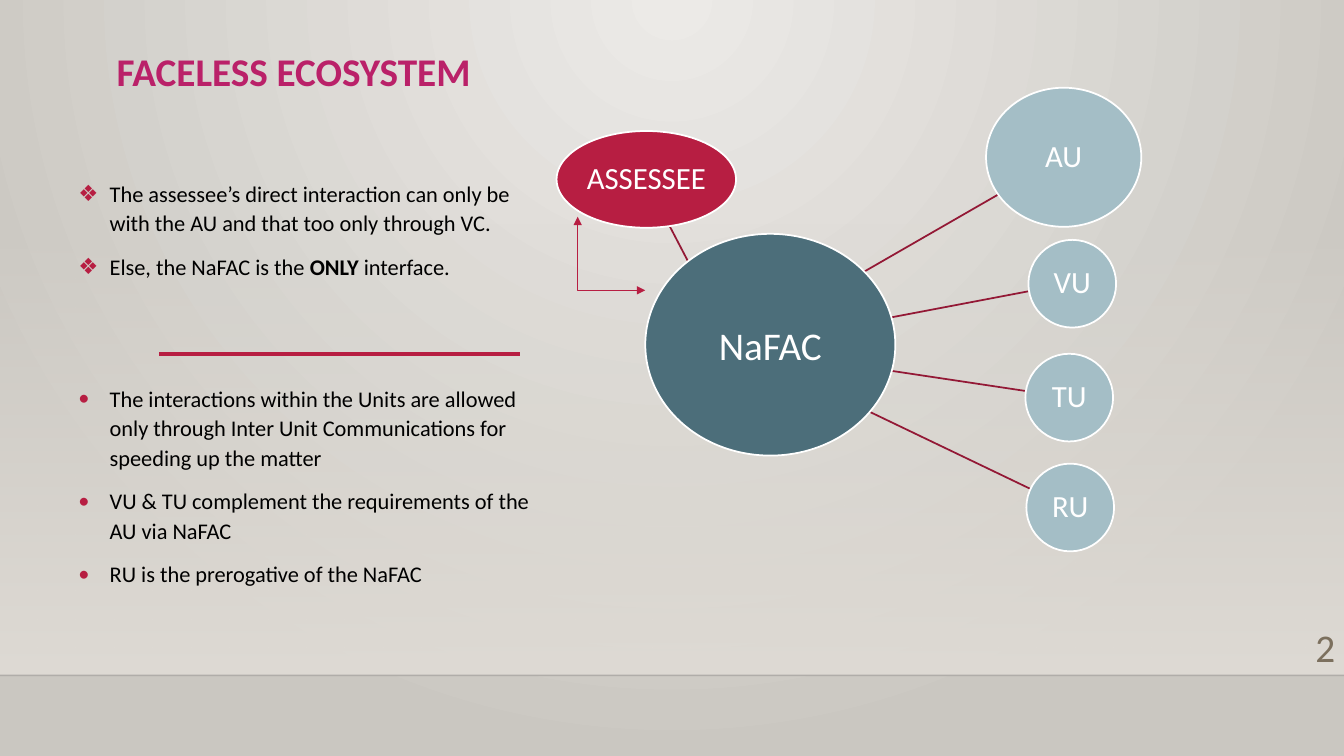
from lxml.etree import SubElement as Sub
from pptx import Presentation
from pptx.dml.color import RGBColor as RGB
from pptx.enum.shapes import MSO_CONNECTOR as LINK, MSO_SHAPE as SHAPE
from pptx.enum.text import MSO_ANCHOR as ANCHOR, PP_ALIGN as ALIGN
from pptx.oxml.ns import qn
from pptx.util import Pt

PX = 9144  # 100 px to the inch
RED, WINE, PINK = RGB(0xB7, 0x1E, 0x42), RGB(0x93, 0x18, 0x35), RGB(0xBA, 0x21, 0x69)
TEAL, MIST = RGB(0x4C, 0x6E, 0x7A), RGB(0xA4, 0xBE, 0xC6)
PALE, STONE, SAND = RGB(0xEC, 0xEA, 0xE7), RGB(0xCA, 0xC7, 0xC1), RGB(0xDF, 0xDB, 0xD5)
WHITE, BLACK, INK, BROWN = RGB(255, 255, 255), RGB(0, 0, 0), RGB(0, 0, 1), RGB(0x7C, 0x70, 0x5E)

deck = Presentation()
deck.slide_width, deck.slide_height = 1333 * PX, 750 * PX
slide = deck.slides.add_slide(deck.slide_layouts[6])
shapes = slide.shapes


def link(ends, color, width, kind=LINK.STRAIGHT):
    line = shapes.add_connector(kind, *[n * PX for n in ends])
    line.line.color.rgb = color
    line.line.width = Pt(width)
    Sub(line.element.spPr, qn("a:effectLst"))
    return line


def write(para, text, size, color, bold=False):
    run = para.add_run()
    run.text = text
    style = {"name": "Calibri", "size": Pt(size), "bold": bold}
    for key, value in style.items():
        setattr(run.font, key, value)
    run.font.color.rgb = color


# Background glow
back = slide.background.fill
back.gradient()
for stop, color in zip(back.gradient_stops, (PALE, STONE)):
    stop.color.rgb = color
grad = slide.element.find(".//" + qn("a:gradFill"))
grad.remove(grad.find(qn("a:lin")))
glow = Sub(grad, qn("a:path"), {"path": "circle"})
Sub(glow, qn("a:fillToRect"), {"l": "43000", "t": "0", "r": "43000", "b": "100000"})

# Wall fading in above the floor edge
wall = shapes.add_shape(SHAPE.RECTANGLE, 0, 221 * PX, 1333 * PX, 449 * PX)
wall.shadow.inherit = False
wall.line.fill.background()
wall.fill.gradient()
wall.fill.gradient_angle = 270
for stop in wall.fill.gradient_stops:
    stop.color.rgb = SAND
edge = link((0, 670, 1333, 670), INK, 1)
for part, alpha in ((wall, "0"), (edge, "20000")):
    tint = part.element.find(".//" + qn("a:srgbClr"))
    Sub(tint, qn("a:alpha"), {"val": alpha})

# Divider and spokes
link((158, 351, 516, 351), RED, 2.5)
for ends in ((778, 368, 1022, 485), (778, 352, 1018, 388), (778, 335, 1020, 289),
             (778, 315, 990, 193), (700, 293, 664, 224)):
    link(ends, WINE, 1.25)

# Hub, assessee and units
for name, x, y, wide, high, color, size, gap in (
        ("NaFAC", 640, 232, 248, 220, TEAL, 28, 1),
        ("ASSESSEE", 552, 130, 178, 96, RED, 22, 0.9),
        ("AU", 978, 87, 154, 138, MIST, 22, 0.9),
        ("VU", 1020, 238, 87, 87, MIST, 22, 0.9),
        ("TU", 1017, 351, 87, 87, MIST, 22, 0.9),
        ("RU", 1018, 460, 87, 87, MIST, 22, 0.9)):
    node = shapes.add_shape(SHAPE.OVAL, x * PX, y * PX, wide * PX, high * PX)
    node.shadow.inherit = False
    node.fill.solid()
    node.fill.fore_color.rgb = color
    node.line.color.rgb = WHITE
    node.line.width = Pt(1.25)
    frame = node.text_frame
    look = {"margin_left": 2 * PX, "margin_right": 2 * PX, "margin_top": 2 * PX,
            "margin_bottom": 2 * PX, "word_wrap": False, "vertical_anchor": ANCHOR.MIDDLE}
    for key, value in look.items():
        setattr(frame, key, value)
    para = frame.paragraphs[0]
    para.alignment = ALIGN.CENTER
    para.line_spacing = gap
    write(para, name, size, WHITE)

# Two-way elbow between assessee and hub
bend = link((643, 218, 570, 285), RED, 0.75, LINK.ELBOW)
form = bend.element.spPr
form.find(qn("a:xfrm")).set("rot", "16200000")
Sub(form.find(qn("a:prstGeom")).find(qn("a:avLst")), qn("a:gd"),
    {"name": "adj1", "fmla": "val 100000"})
for tip in ("a:headEnd", "a:tailEnd"):
    Sub(form.find(qn("a:ln")), qn(tip), {"type": "triangle"})

# Title and slide number
for text, x, y, wide, high, color, bold, side, anchor, gap in (
        ("FACELESS ECOSYSTEM", 106, 45, 484, 54, PINK, True, ALIGN.LEFT, ANCHOR.BOTTOM, 0.9),
        ("2", 1245, 613, 89, 55, BROWN, False, ALIGN.RIGHT, ANCHOR.TOP, 1)):
    frame = shapes.add_textbox(x * PX, y * PX, wide * PX, high * PX).text_frame
    frame.word_wrap = True
    frame.vertical_anchor = anchor
    para = frame.paragraphs[0]
    para.alignment = side
    para.line_spacing = gap
    write(para, text, 28, color, bold)

# Bullet notes: mark, space before, text pieces (every second one bold)
notes = (
    ("❖", 0, ["The assessee’s direct interaction can only be with the AU "
              "and that too only through VC."]),
    ("❖", 10, ["Else, the NaFAC is the ", "ONLY ", "interface."]),
    ("•", 73, ["The interactions within the Units are allowed only through "
               "Inter Unit Communications for speeding up the matter"]),
    ("•", 10, ["VU & TU complement the requirements of the AU via NaFAC"]),
    ("•", 10, ["RU is the prerogative of the NaFAC"]),
)
frame = shapes.add_textbox(68 * PX, 171 * PX, 484 * PX, 425 * PX).text_frame
frame.word_wrap = True
for i, (mark, space, parts) in enumerate(notes):
    para = frame.add_paragraph() if i else frame.paragraphs[0]
    para.line_spacing = 1.1
    para.space_before = Pt(space)
    props = para._p.get_or_add_pPr()
    props.set("marL", str(31 * PX))
    props.set("indent", str(-31 * PX))
    Sub(Sub(props, qn("a:buClr")), qn("a:srgbClr"), {"val": str(RED)})
    Sub(props, qn("a:buFont"), {"typeface": "Calibri"})
    Sub(props, qn("a:buChar"), {"char": mark})
    for j, text in enumerate(parts):
        write(para, text, 16, BLACK, j % 2 == 1)

deck.save("out.pptx")
